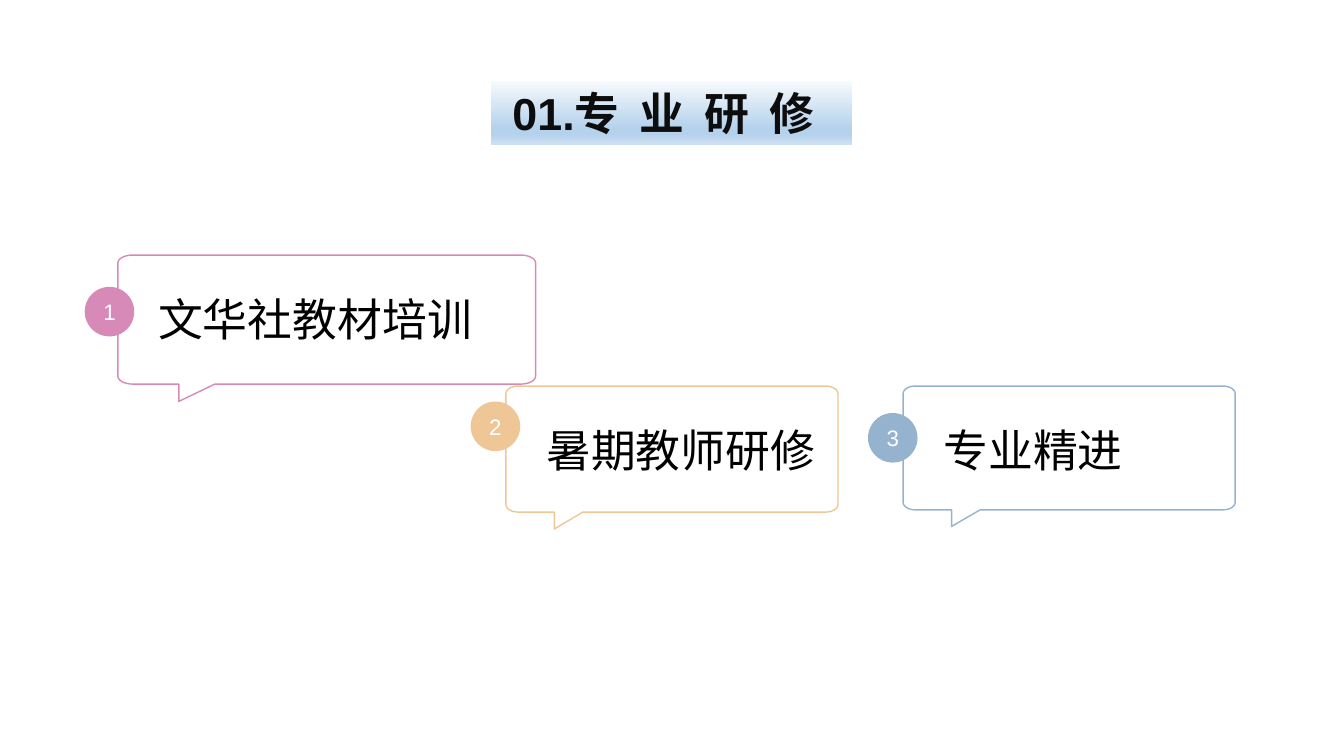
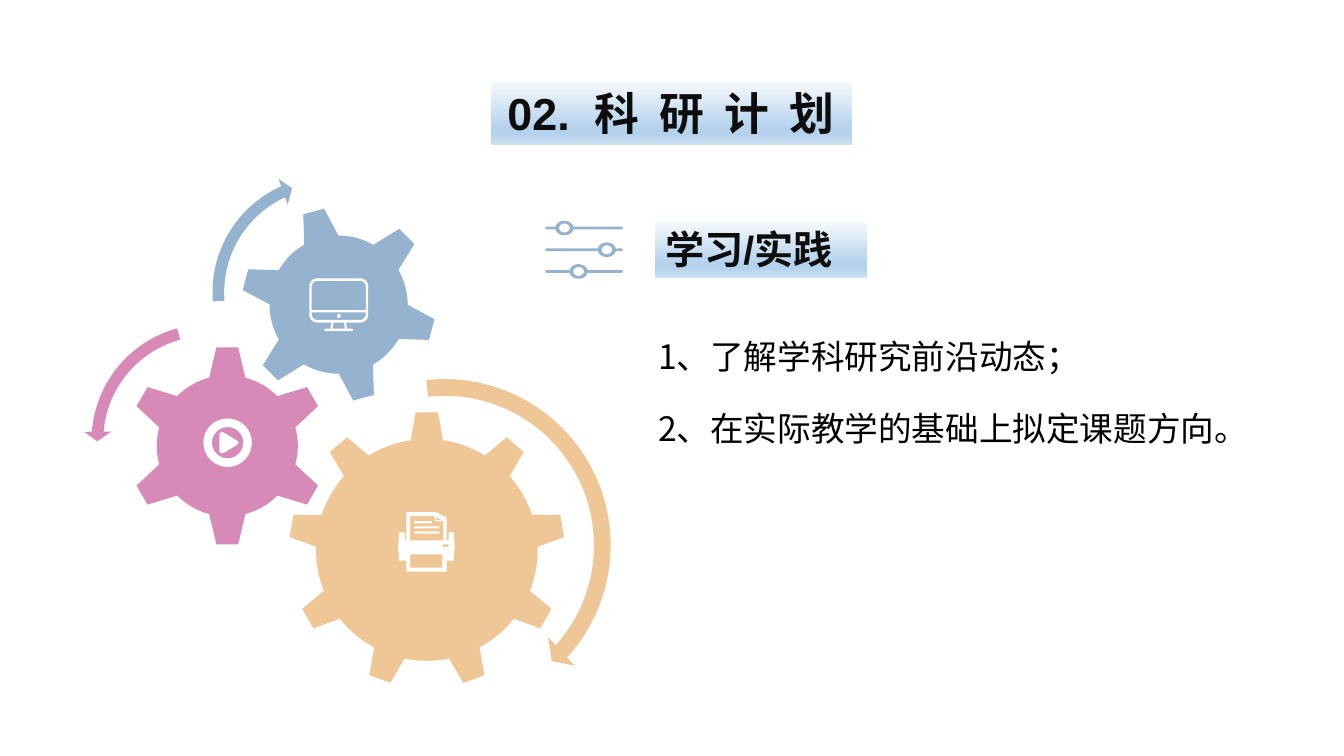
import math

import lxml.etree
import pptx
import pptx.dml.color
import pptx.enum.shapes
import pptx.enum.text
import pptx.oxml.ns
import pptx.util

Pt = pptx.util.Pt
RGBColor = pptx.dml.color.RGBColor
Shape = pptx.enum.shapes.MSO_SHAPE
Align = pptx.enum.text.PP_ALIGN
Anchor = pptx.enum.text.MSO_ANCHOR
qn = pptx.oxml.ns.qn

PINK = RGBColor(0xD7, 0x8A, 0xB7)
ORANGE = RGBColor(0xEF, 0xC7, 0x96)
BLUE = RGBColor(0x95, 0xB3, 0xCE)
WHITE = RGBColor(0xFF, 0xFF, 0xFF)
BLACK = RGBColor(0, 0, 0)
INK = RGBColor(0x0D, 0x0D, 0x0D)
BAND_STOPS = [
    (0, RGBColor(0xF7, 0xFA, 0xFD)),
    (74, RGBColor(0xB5, 0xD2, 0xEC)),
    (83, RGBColor(0xB5, 0xD2, 0xEC)),
    (100, RGBColor(0xCE, 0xE1, 0xF2)),
]

TITLE_FONT = {"name": "Arial", "size": Pt(32), "bold": True}
HEADING_FONT = {"name": "Arial", "size": Pt(28), "bold": True}
CALLOUT_FONT = {"name": "Arial", "size": Pt(32)}
NUMBER_FONT = {"name": "Arial", "size": Pt(16)}
BODY_FONT = {"name": "Noto Sans CJK SC", "size": Pt(24)}


def rounded(left, top, width, height, upper=(0, 0), lower=(0, 0)):
    """Clockwise rectangle outline with elliptical upper and lower corners."""
    right, bottom = left + width, top + height
    corners = [
        (left, top, 1, 1, upper),
        (right, top, -1, 1, upper),
        (right, bottom, -1, -1, lower),
        (left, bottom, 1, -1, lower),
    ]
    points = []
    for index, (x, y, x_sign, y_sign, (rx, ry)) in enumerate(corners):
        steps = 8 if rx else 0
        for step in range(steps + 1):
            angle = math.radians(180 + 90 * index + 90 * step / max(steps, 1))
            points.append((x + rx * (x_sign + math.cos(angle)),
                           y + ry * (y_sign + math.sin(angle))))
    return points


def oval(x, y, rx, ry):
    return rounded(x - rx, y - ry, 2 * rx, 2 * ry, (rx, ry), (rx, ry))


class Deck:
    def __init__(self):
        self.deck = pptx.Presentation()
        self.deck.slide_width, self.deck.slide_height = Pt(960), Pt(540)
        self.page = None

    def paint(self, shape, fill=None, line=None):
        shape.shadow.inherit = False
        if fill is None:
            shape.fill.background()
        else:
            shape.fill.solid()
            shape.fill.fore_color.rgb = fill
        if line is None:
            shape.line.fill.background()
        else:
            shape.line.color.rgb = line
            shape.line.width = Pt(1)
        return shape

    def band(self, shape):
        """Fill with the shared light blue gradient."""
        shape.fill.gradient()
        shape.fill.gradient_angle = 270
        stops = shape._element.spPr.find(qn("a:gradFill")).find(qn("a:gsLst"))
        for stop in list(stops):
            stops.remove(stop)
        for percent, color in BAND_STOPS:
            stop = lxml.etree.SubElement(stops, qn("a:gs"), pos=str(percent * 1000))
            lxml.etree.SubElement(stop, qn("a:srgbClr"), val=str(color))

    def set_text(self, shape, lines, font, color, align=Align.LEFT, frame=None, para_format=None):
        """Fill the frame; a line is a list of (text, letter spacing) spans."""
        box = shape.text_frame
        settings = {"word_wrap": True, "vertical_anchor": Anchor.TOP,
                    "auto_size": pptx.enum.text.MSO_AUTO_SIZE.NONE}
        for name, value in {**settings, **(frame or {})}.items():
            setattr(box, name, value)
        for index, spans in enumerate(lines):
            para = box.add_paragraph() if index else box.paragraphs[0]
            for name, value in {"alignment": align, **(para_format or {})}.items():
                if index or name != "space_before":
                    setattr(para, name, value)
            for text, spacing in spans:
                span = para.add_run()
                span.text = text
                for name, value in font.items():
                    setattr(span.font, name, value)
                span.font.color.rgb = color
                if spacing:
                    span._r.get_or_add_rPr().set("spc", str(round(spacing * 100)))

    def slide(self, spans, right_inset=7.2):
        """Start a slide with its banded title."""
        self.page = self.deck.slides.add_slide(self.deck.slide_layouts[5])
        title = self.page.shapes.title
        place = {"left": 350.6, "top": 57.6, "width": 257.8, "height": 46}
        for name, value in place.items():
            setattr(title, name, Pt(value))
        self.band(title)
        self.set_text(title, [spans], TITLE_FONT, INK, Align.CENTER,
                      {"word_wrap": False, "margin_right": Pt(right_inset)})

    def shape(self, kind, left, top, width, height, fill, turn=0, adjustments=()):
        shape = self.page.shapes.add_shape(kind, Pt(left), Pt(top), Pt(width), Pt(height))
        shape.rotation = turn
        for index, value in enumerate(adjustments):
            shape.adjustments[index] = value
        return self.paint(shape, fill)

    def outline(self, contours, fill=None, line=None, left=0, top=0):
        """Closed contours in one freeform; inner ones cut holes."""
        builder = None
        for contour in contours:
            points = [(Pt(left + x), Pt(top + y)) for x, y in contour]
            if builder is None:
                builder = self.page.shapes.build_freeform(*points[0], scale=1.0)
            else:
                builder.move_to(*points[0])
            builder.add_line_segments(points[1:], close=True)
        return self.paint(builder.convert_to_shape(), fill, line)

    def callout(self, text, left, top, width, height, color):
        """Speech bubble whose tail hangs from the lower edge."""
        corner = (0.036 * width, 0.062 * height)
        points = rounded(left, top, width, height, corner, corner)
        bottom = top + height
        tail = [(left + 0.232 * width, bottom),
                (left + 0.146 * width, bottom + 0.134 * height),
                (left + 0.146 * width, bottom)]
        before_tail = len(points) * 3 // 4
        bubble = self.outline([points[:before_tail] + tail + points[before_tail:]], line=color)
        margins = {"margin_left": Pt(28.8), "margin_top": Pt(14.4),
                   "margin_right": Pt(14.4), "margin_bottom": Pt(14.4)}
        self.set_text(bubble, [[(text, 0)]], CALLOUT_FONT, BLACK,
                      frame=margins, para_format={"line_spacing": 1.3})

    def number(self, text, left, top, color):
        disc = self.shape(Shape.OVAL, left, top, 35.4, 35.4, color)
        self.set_text(disc, [[(text, 0)]], NUMBER_FONT, WHITE, Align.CENTER,
                      {"vertical_anchor": Anchor.MIDDLE})

    def gear(self, kind, x, y, size, color, turn=0):
        self.shape(kind, x - size / 2, y - size / 2, size, size, color, turn)

    def arc_arrow(self, left, top, size, color, start, turn=0, flip=False):
        arrow = self.shape(Shape.CIRCULAR_ARROW, left, top, size, size, color, turn,
                           (0.047, 2.99, 25.339, start, 0.055))
        if flip:
            arrow._element.spPr.find(qn("a:xfrm")).set("flipH", "1")

    def heading(self, text, left, top, width, height):
        box = self.shape(Shape.RECTANGLE, left, top, width, height, WHITE)
        self.band(box)
        self.set_text(box, [[(text, 0)]], HEADING_FONT, INK)

    def body(self, lines, left, top, width, height):
        box = self.page.shapes.add_textbox(Pt(left), Pt(top), Pt(width), Pt(height))
        self.set_text(box, [[(line, 0)] for line in lines], BODY_FONT, BLACK,
                      para_format={"space_before": Pt(23)})

    # Icons
    def printer_icon(self, left, top):
        case = [(0.7, 14.4), (5, 14.4), (5, 20.2), (5.8, 20.2), (5.8, 0), (27, 0),
                (34.6, 4), (34.6, 20.2), (36, 20.2), (36, 14.4), (39.6, 14.4),
                (40.4, 24.5), (39.6, 34.6), (34.6, 34.6), (34.6, 42.5),
                (5.8, 42.5), (5.8, 34.6), (0.7, 34.6), (0, 24.5)]
        sheet = [(8.6, 20.2), (32.4, 20.2), (32.4, 6.5), (26.6, 6.5),
                 (25.9, 2.9), (8.6, 2.9)]
        fold = [(27.4, 3.4), (27.4, 5.6), (31, 5.6)]
        text_lines = [rounded(11.5, 6.5 + 3.6 * row, 12.5 if row == 0 else 18, 1.6)
                      for row in range(3)]
        tray, button = rounded(8.6, 30.2, 23, 9.4), rounded(31.7, 23, 4.3, 1.8)
        self.outline([case, sheet, fold, *text_lines, tray, button], WHITE,
                     left=left, top=top)

    def play_icon(self, left, top):
        triangle = [(11.5, 11), (12.6, 9.8), (14.5, 10), (24.3, 16), (25.2, 17.3),
                    (24.3, 18.7), (14.5, 24.6), (12.6, 24.9), (11.5, 23.5)]
        rings = [oval(17.3, 17.3, radius, radius) for radius in (17.3, 11.2)]
        self.outline([*rings, triangle], WHITE, left=left, top=top)

    def monitor_icon(self, left, top):
        case = rounded(0, 0, 42, 31.7, (5.8, 5.8), (5.8, 5.8))
        screen = rounded(1.7, 1.9, 38.6, 20.9, upper=(4, 4))
        chin = rounded(1.7, 24.3, 38.6, 5.4, lower=(4, 4))
        leg = [(15.8, 31.7), (17.3, 31.7), (16.6, 36), (15, 36)]
        other_leg = [(42 - x, y) for x, y in leg]
        base = rounded(10.8, 36, 20.4, 1.7, (0.8, 0.8), (0.8, 0.8))
        self.outline([case, screen, chin, leg, other_leg, base], WHITE,
                     left=left, top=top)
        self.shape(Shape.OVAL, left + 19.6, top + 25.4, 2.8, 2.8, WHITE)

    def sliders_icon(self, left, top):
        contours = []
        for x, y in [(13.7, 5.2), (44, 20.7), (23.8, 36.2)]:
            end = (1, 1)
            contours += [rounded(0, y - 1, x - 6.4, 2, end, end),
                         rounded(x + 6.4, y - 1, 49 - x, 2, end, end),
                         oval(x, y, 6.5, 5.2), oval(x, y, 3.8, 3.2)]
        self.outline(contours, BLUE, left=left, top=top)


def main():
    style = Deck()

    # Training: three numbered speech bubbles
    style.slide([("01.", 0), ("专 业 研 修", 3.6)], right_inset=18)
    style.callout("文华社教材培训", 84.2, 182.2, 298.4, 92.2, PINK)
    style.callout("暑期教师研修", 361.4, 275.8, 237.2, 90, ORANGE)
    style.callout("专业精进", 645.1, 275.8, 237.2, 88.4, BLUE)
    style.number("1", 60.5, 204.9, PINK)
    style.number("2", 336.2, 286.8, ORANGE)
    style.number("3", 620, 295, BLUE)

    # Research plan: gears with turning arrows
    style.slide([("02.", 0), (" ", 9), ("科 研 计 划", 3.6)])
    style.gear(Shape.GEAR_9, 304.9, 392.8, 198, ORANGE)
    style.gear(Shape.GEAR_6, 162.4, 318.5, 144, PINK)
    style.gear(Shape.GEAR_6, 241.9, 217.6, 141, BLUE, turn=345)
    style.arc_arrow(190.8, 262.8, 253.4, ORANGE, 158.236)
    style.arc_arrow(146.2, 120.2, 177.1, BLUE, 199.215, turn=203.4)
    style.arc_arrow(59.8, 226.1, 177.1, PINK, 199.215, turn=46.8, flip=True)
    style.printer_icon(284.4, 365.8)
    style.play_icon(145.3, 298.9)
    style.monitor_icon(221, 198.8)

    # Research plan: heading and points
    style.body(["1、了解学科研究前沿动态；", "2、在实际教学的基础上拟定课题方向。"],
               463, 236.2, 437, 94.3)
    style.heading("学习/实践", 468, 157.7, 151.2, 41)
    style.sliders_icon(389.5, 157.7)

    style.deck.save("out.pptx")


if __name__ == "__main__":
    main()
